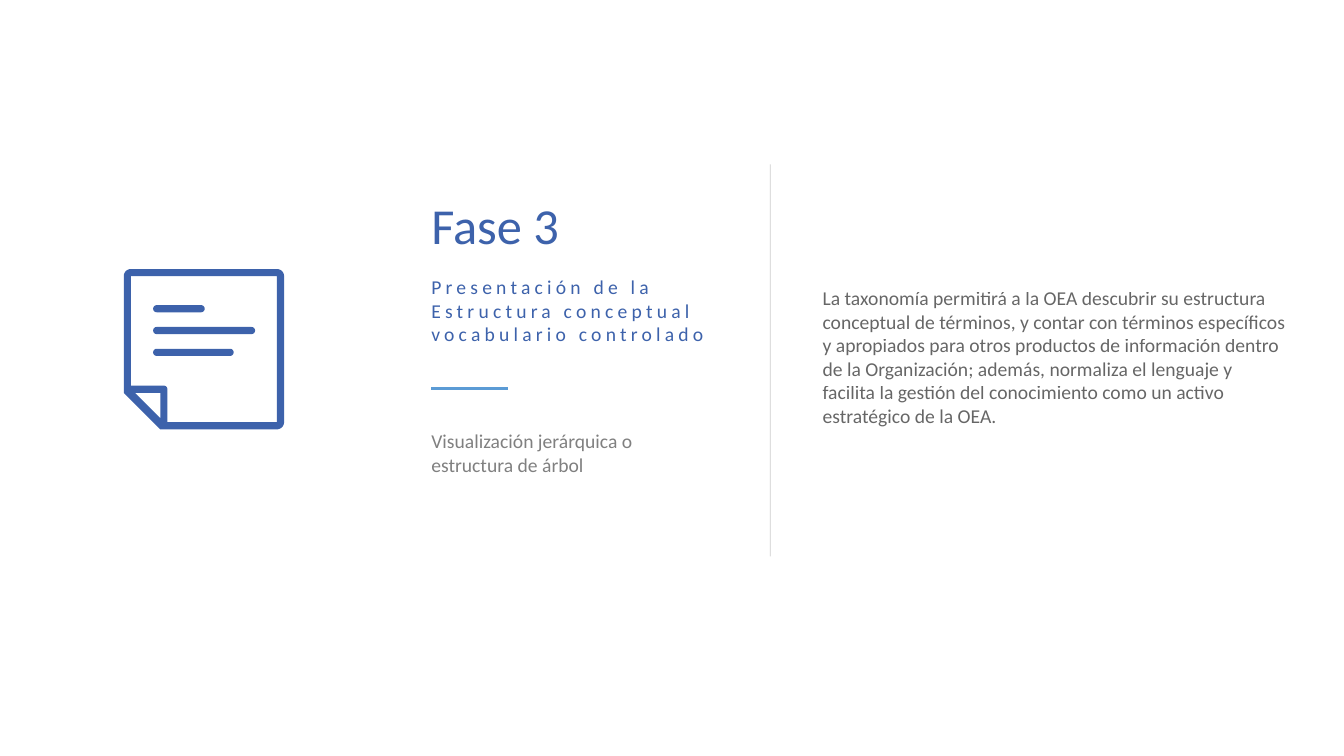
from math import cos, radians, sin

from lxml.etree import SubElement
from pptx import Presentation
from pptx.dml.color import RGBColor
from pptx.enum.shapes import MSO_CONNECTOR as Connector
from pptx.oxml.ns import qn
from pptx.util import Cm, Pt

BLUE = RGBColor(0x3D, 0x62, 0xAB)
LIGHT_BLUE = RGBColor(0x5B, 0x9B, 0xD5)
GRAY = RGBColor(0x80, 0x80, 0x80)
BLACK = RGBColor(0, 0, 0)


def set_opacity(element, percent):
    color = next(element.iter(qn("a:srgbClr")))
    SubElement(color, qn("a:alpha")).set("val", str(percent * 1000))


def arc(center_x, center_y, radius, start, end):
    """Return points along an arc; angles in degrees, clockwise from the right."""
    steps = 8
    angles = [radians(start + (end - start) * i / steps) for i in range(steps + 1)]
    return [(center_x + radius * cos(a), center_y + radius * sin(a)) for a in angles]


deck = Presentation()
deck.slide_width, deck.slide_height = Cm(33.87), Cm(19.05)
page = deck.slides.add_slide(deck.slide_layouts[6])

# Texts: wording, left, top, width, height, right inset, size, color, opacity, spacing
texts = [
    ("Fase 3", 10.87, 4.88, 10.24, 3.07, 0, 36, BLUE, 100, 0),
    ("Visualización jerárquica o estructura de árbol",
     10.87, 10.82, 7.21, 1.19, 0.25, 14, GRAY, 100, 0),
    ("La taxonomía permitirá a la OEA descubrir su estructura conceptual de "
     "términos, y contar con términos específicos y apropiados para otros "
     "productos de información dentro de la Organización; además, normaliza el "
     "lenguaje y facilita la gestión del conocimiento como un activo "
     "estratégico de la OEA.",
     20.73, 7.21, 11.96, 4.19, 0.25, 14, BLACK, 60, 0),
    ("Presentación de la Estructura conceptual vocabulario controlado",
     10.87, 6.93, 8.05, 1.8, 0.25, 14, BLUE, 100, 3),
]
for wording, left, top, width, height, inset, size, color, opacity, spacing in texts:
    box = page.shapes.add_textbox(Cm(left), Cm(top), Cm(width), Cm(height))
    frame = box.text_frame
    frame.word_wrap = True
    frame.margin_left = frame.margin_top = frame.margin_bottom = 0
    frame.margin_right = Cm(inset)
    frame.text = wording
    span = frame.paragraphs[0].runs[0]
    span.font.name = "Calibri"
    span.font.size = Pt(size)
    span.font.color.rgb = color
    if opacity < 100:
        set_opacity(span.font._element, opacity)
    if spacing:
        span.font._element.set("spc", str(spacing * 100))

# Rules: start x, start y, end x, end y, color, width, opacity
rules = [
    (10.87, 9.78, 12.8, 9.78, LIGHT_BLUE, 2, 100),
    (19.41, 4.14, 19.41, 14.02, BLACK, 0.5, 20),
]
for x1, y1, x2, y2, color, width, opacity in rules:
    rule = page.shapes.add_connector(Connector.STRAIGHT, Cm(x1), Cm(y1), Cm(x2), Cm(y2))
    rule.line.color.rgb = color
    rule.line.width = Pt(width)
    if opacity < 100:
        set_opacity(rule.line._get_or_add_ln(), opacity)
    SubElement(rule._element.spPr, qn("a:effectLst"))

# Page icon: sheet outline with a folded corner and three lines of writing
LEFT, TOP, RIGHT, BOTTOM = 3.12, 6.78, 7.16, 10.82
STROKE = 0.18
FOLD = 0.92
inner_left, inner_top = LEFT + STROKE, TOP + STROKE
inner_right, inner_bottom = RIGHT - STROKE, BOTTOM - STROKE
fold_x, fold_y = LEFT + FOLD, BOTTOM - FOLD
HALF = STROKE / 2

sheet = (
    arc(inner_left, inner_top, STROKE, 180, 270)
    + arc(inner_right, inner_top, STROKE, 270, 360)
    + arc(inner_right, inner_bottom, STROKE, 0, 90)
    + [(fold_x, BOTTOM), (LEFT, fold_y)]
)
sheet_hole = (
    [(inner_left, inner_top), (inner_left, fold_y - STROKE)]
    + arc(fold_x + HALF, fold_y - HALF, HALF, 270, 360)
    + [(fold_x + STROKE, inner_bottom), (inner_right, inner_bottom),
       (inner_right, inner_top)]
)
fold_hole = [(fold_x, BOTTOM - 0.28), (LEFT + 0.28, fold_y), (fold_x, fold_y)]
contours = [sheet, sheet_hole, fold_hole]
for row, line_right in enumerate([5.16, 6.43, 5.89]):
    y = 7.78 + 0.55 * row
    contours.append(
        arc(3.86 + HALF, y, HALF, 90, 270) + arc(line_right - HALF, y, HALF, -90, 90)
    )

outlines = [[(Cm(x), Cm(y)) for x, y in contour] for contour in contours]
builder = page.shapes.build_freeform(*outlines[0][0])
for outline in outlines:
    builder.move_to(*outline[0])
    builder.add_line_segments(outline[1:], close=True)
icon = builder.convert_to_shape()
icon.shadow.inherit = False
icon.fill.solid()
icon.fill.fore_color.rgb = BLUE
icon.line.fill.background()

deck.save("out.pptx")
